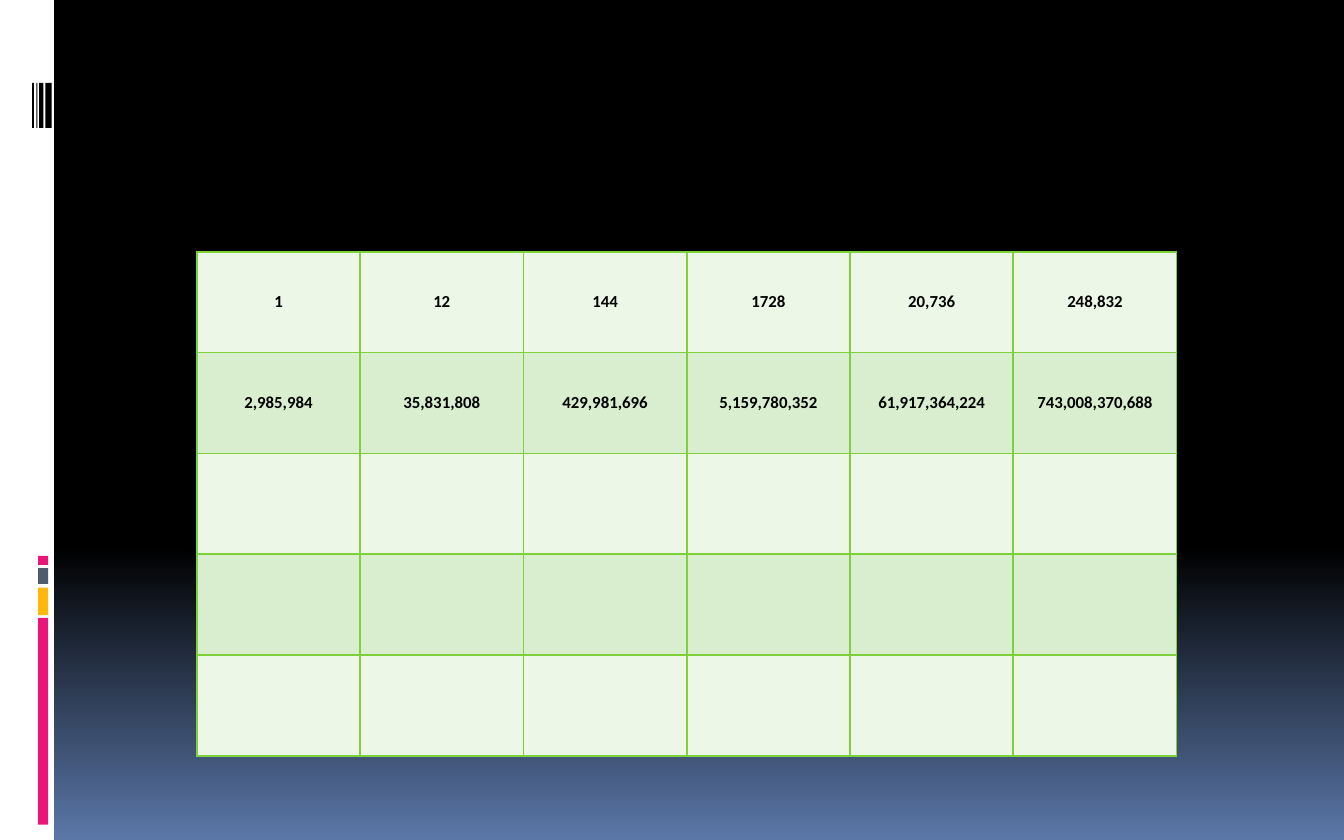
"""Build a slide with a table of the powers of twelve beside a decorated margin."""
from copy import deepcopy

from lxml import etree
from pptx import Presentation
from pptx import util as u
from pptx.dml.color import RGBColor
from pptx.enum import shapes, text
from pptx.oxml import ns

BLACK = RGBColor(0x00, 0x00, 0x00)
WHITE = RGBColor(0xFF, 0xFF, 0xFF)
BLUE = RGBColor(0x5B, 0x77, 0xA8)
PINK = RGBColor(0xEA, 0x15, 0x7A)
AMBER = RGBColor(0xFE, 0xB8, 0x0A)
SLATE = RGBColor(0x4E, 0x5B, 0x6F)
GREEN = RGBColor(0x7F, 0xD1, 0x3B)
PALE_GREEN = RGBColor(0xEC, 0xF7, 0xE8)
LIGHT_GREEN = RGBColor(0xD8, 0xEE, 0xCE)


def add_bar(s, left, top, width, height, color):
    sp = s.shapes.add_shape(
        shapes.MSO_SHAPE.RECTANGLE, u.Cm(left), u.Cm(top), u.Cm(width), u.Cm(height)
    )
    sp.shadow.inherit = False
    sp.fill.solid()
    sp.fill.fore_color.rgb = color
    sp.line.fill.background()


def set_borders(cell, color):
    tc_pr = cell._tc.get_or_add_tcPr()
    for i, side in enumerate(("lnL", "lnR", "lnT", "lnB")):
        ln = etree.Element(ns.qn(f"a:{side}"), w=str(u.Pt(1)))
        fill = etree.SubElement(ln, ns.qn("a:solidFill"))
        etree.SubElement(fill, ns.qn("a:srgbClr"), val=str(color))
        tc_pr.insert(i, ln)


prs = Presentation()
prs.slide_width = u.Cm(25.4)
prs.slide_height = u.Cm(15.88)
s = prs.slides.add_slide(prs.slide_layouts[6])

bg = s.background.fill
bg.gradient()
bg.gradient_angle = 270
start, end = bg.gradient_stops
start.color.rgb, start.position = BLACK, 0
end.color.rgb, end.position = BLUE, 1
stops = s._element.find(f".//{ns.qn('a:gsLst')}")
middle = deepcopy(stops[0])
middle.set("pos", "65000")
stops.insert(1, middle)

add_bar(s, 0, 0, 1.02, 15.88, WHITE)
for top, height, color in [
    (11.68, 3.91, PINK),
    (11.11, 0.52, AMBER),
    (10.74, 0.3, SLATE),
    (10.51, 0.17, PINK),
]:
    add_bar(s, 0.72, top, 0.19, height, color)
for left, width in [(0.86, 0.12), (0.74, 0.08), (0.69, 0.02), (0.61, 0.03)]:
    add_bar(s, left, 1.57, width, 0.85, BLACK)

POWERS = [
    ["1", "12", "144", "1728", "20,736", "248,832"],
    ["2,985,984", "35,831,808", "429,981,696",
     "5,159,780,352", "61,917,364,224", "743,008,370,688"],
]
ROWS, COLS = 5, 6
table = s.shapes.add_table(
    ROWS, COLS, u.Cm(3.72), u.Cm(4.76), u.Cm(18.52), u.Cm(9.53)
).table
for row in range(ROWS):
    for col in range(COLS):
        cell = table.cell(row, col)
        cell.fill.solid()
        cell.fill.fore_color.rgb = LIGHT_GREEN if row % 2 else PALE_GREEN
        set_borders(cell, GREEN)
        cell.vertical_anchor = text.MSO_ANCHOR.MIDDLE
        cell.margin_left = cell.margin_right = u.Cm(0.25)
        cell.margin_top = cell.margin_bottom = u.Cm(0.1)
        if row < len(POWERS):
            p = cell.text_frame.paragraphs[0]
            p.alignment = text.PP_ALIGN.CENTER
            r = p.add_run()
            r.text = POWERS[row][col]
            r.font.name = "Calibri"
            r.font.size = u.Pt(9)
            r.font.bold = True
            r.font.color.rgb = BLACK

prs.save("out.pptx")
